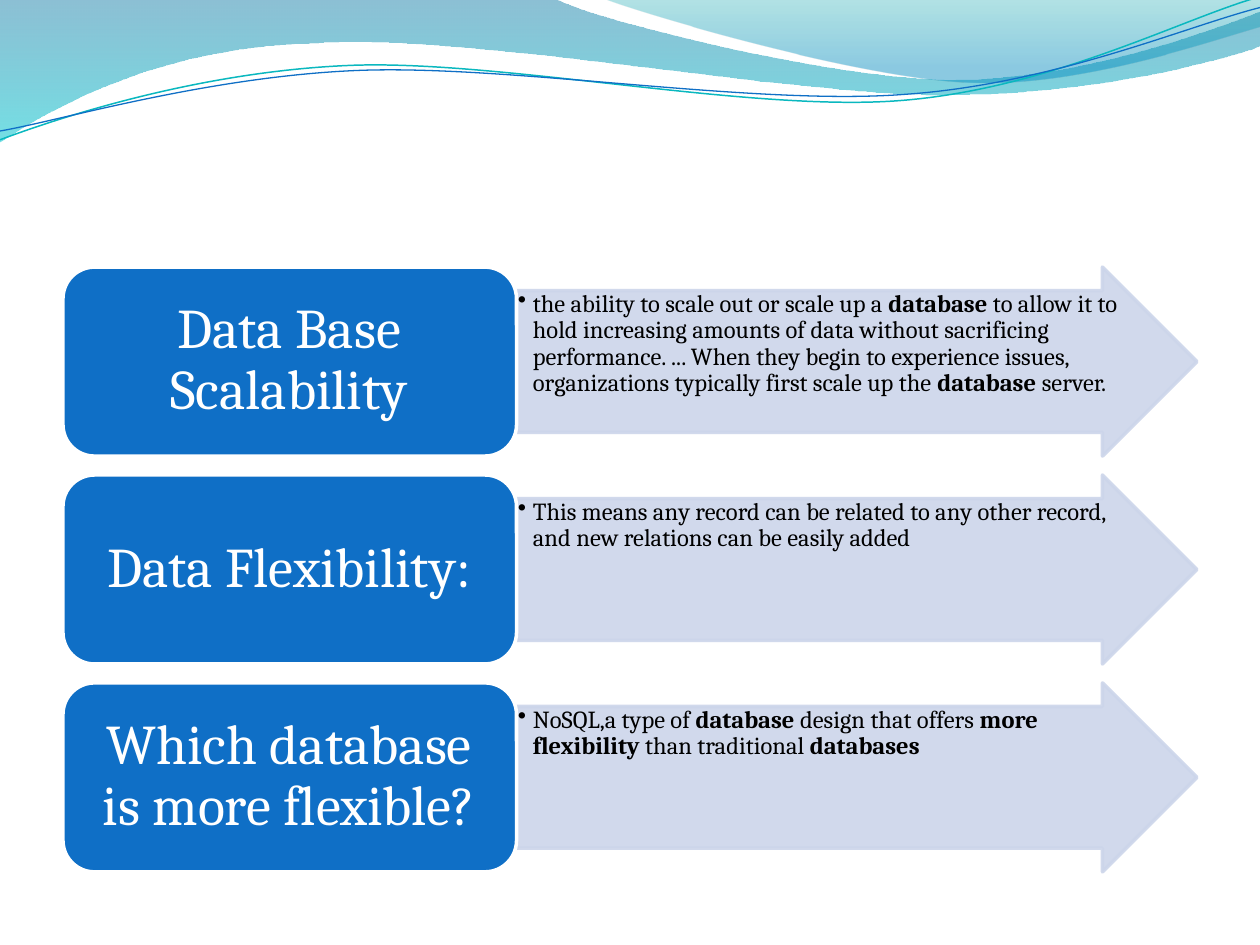
from lxml.etree import SubElement
from pptx import Presentation
from pptx.dml.color import RGBColor
from pptx.enum.shapes import MSO_SHAPE as Shape
from pptx.enum.text import MSO_ANCHOR as Anchor, PP_ALIGN as Align
from pptx.oxml.ns import qn
from pptx.util import Inches, Pt

COLORS = {
    "deep": "0074A1", "aqua": "00C6CF", "teal": "00A1A9", "sky": "008BBF",
    "teal_line": "0AB8BF", "blue": "0F6FC6", "arrow": "CCD5EA",
    "white": "FFFFFF", "black": "000000",
}
RGB = {name: RGBColor.from_string(value) for name, value in COLORS.items()}


def add_wave(shapes, start, segments, closed):
    builder = shapes.build_freeform(Inches(start[0]), Inches(start[1]))
    ends = [(Inches(segment[-2]), Inches(segment[-1])) for segment in segments]
    builder.add_line_segments(ends, close=closed)
    wave = builder.convert_to_shape()
    wave.shadow.inherit = False
    edges = list(wave._element.spPr.iter(qn("a:lnTo")))
    for edge, segment in zip(edges, segments):
        if len(segment) == 6:
            curve = edge.makeelement(qn("a:cubicBezTo"), {})
            for x, y in zip(segment[::2], segment[1::2]):
                point = SubElement(curve, qn("a:pt"))
                point.set("x", str(Inches(x) - wave.left))
                point.set("y", str(Inches(y) - wave.top))
            edge.getparent().replace(edge, curve)
    return wave


def set_opacity(color_element, percent):
    SubElement(color_element, qn("a:alpha")).set("val", str(percent * 1000))


deck = Presentation()
deck.slide_width, deck.slide_height = Inches(10), Inches(7.5)
page = deck.slides.add_slide(deck.slide_layouts[6])

bands = [
    ((0, 0),
     [(4.4, -0.01), (4.76, 0.17, 6.64, 0.63, 7.58, 0.63),
      (8.53, 0.63, 9.58, 0.26, 10, 0.09), (10.01, 0.36),
      (9.83, 0.44, 8.7, 0.76, 7.46, 0.75), (6.22, 0.75, 3.82, 0.28, 2.57, 0.34),
      (1.29, 0.36, 0.46, 0.83, -0.01, 1.13)],
     [(0, "deep", 45), (1, "aqua", 55)]),
    ((4.79, -0.01),
     [(5.09, 0.11, 6.82, 0.62, 7.69, 0.65), (8.56, 0.69, 9.61, 0.32, 10, 0.21), (10, 0)],
     [(0, "teal", 30), (0.8, "sky", 45)]),
]
for start, segments, stops in bands:
    band = add_wave(page.shapes, start, segments, True)
    band.line.fill.background()
    band.fill.gradient()
    band.fill.gradient_angle = 270
    for stop, (position, color, opacity) in zip(band.fill.gradient_stops, stops):
        stop.position = position
        stop.color.rgb = RGB[color]
    color_elements = list(band._element.spPr.iter(qn("a:srgbClr")))
    for element, (position, color, opacity) in zip(color_elements, stops):
        set_opacity(element, opacity)

strands = [
    ((0, 1.11),
     [(0.48, 0.93, 1.58, 0.57, 2.77, 0.52), (3.95, 0.47, 5.93, 0.89, 7.13, 0.8),
      (8.33, 0.71, 9.38, 0.15, 9.98, -0.02)], "teal_line", 0.85),
    ((0, 1.04),
     [(0.47, 0.96, 1.64, 0.61, 2.83, 0.56), (4.03, 0.51, 5.97, 0.84, 7.17, 0.75),
      (8.36, 0.67, 9.41, 0.21, 10, 0.06)], "blue", 0.75),
]
for start, segments, color, width in strands:
    strand = add_wave(page.shapes, start, segments, False)
    strand.fill.background()
    strand.line.color.rgb = RGB[color]
    strand.line.width = Pt(width)

topics = [
    ("Data Base Scalability",
     [("the ability to scale out or scale up a ", False), ("database", True),
      (" to allow it to hold increasing amounts of data without sacrificing performance. ... "
       "When they begin to experience issues, organizations typically first scale up the ", False),
      ("database", True), (" server.", False)]),
    ("Data Flexibility:",
     [("This means any record can be related to any other record, "
       "and new relations can be easily added", False)]),
    ("Which database is more flexible?",
     [("NoSQL,a type of ", False), ("database", True), (" design that offers ", False),
      ("more flexibility", True), (" than traditional ", False), ("databases", True)]),
]
for row, (title, description) in enumerate(topics):
    top = 2.12 + 1.65 * row
    for kind, left, width, fill, line in [
        (Shape.RIGHT_ARROW, 4.1, 5.4, "arrow", "arrow"),
        (Shape.ROUNDED_RECTANGLE, 0.5, 3.6, "blue", "white"),
    ]:
        shape = page.shapes.add_shape(kind, Inches(left), Inches(top), Inches(width), Inches(1.5))
        shape.shadow.inherit = False
        shape.fill.solid()
        shape.fill.fore_color.rgb = RGB[fill]
        shape.line.color.rgb = RGB[line]
        shape.line.width = Pt(2)
        if kind == Shape.RIGHT_ARROW:
            shape.adjustments[0], shape.adjustments[1] = 0.75, 0.5
            for element in shape._element.spPr.iter(qn("a:srgbClr")):
                set_opacity(element, 90)

    for spans, left, drop, width, height, anchor, align, size, ink, inset_x, inset_y in [
        (description, 4.1, 0.18, 4.84, 1.12, Anchor.TOP, Align.LEFT, 14, "black", 0.01, 0.01),
        ([(title, False)], 0.57, 0.07, 3.45, 1.35, Anchor.MIDDLE, Align.CENTER, 32, "white",
         0.13, 0.07),
    ]:
        box = page.shapes.add_textbox(
            Inches(left), Inches(top + drop), Inches(width), Inches(height))
        frame = box.text_frame
        frame.word_wrap = True
        frame.vertical_anchor = anchor
        frame.margin_left = frame.margin_right = Inches(inset_x)
        frame.margin_top = frame.margin_bottom = Inches(inset_y)
        para = frame.paragraphs[0]
        para.alignment = align
        para.line_spacing = 0.9
        para.font.name = "Cambria"
        para.font.size = Pt(size)
        para.font.color.rgb = RGB[ink]
        if spans is description:
            para.level = 1
            properties = para._p.get_or_add_pPr()
            properties.set("marL", str(Inches(0.12)))
            properties.set("indent", str(Inches(-0.12)))
            bullet = properties.makeelement(qn("a:buChar"), {"char": "•"})
            properties.find(qn("a:defRPr")).addprevious(bullet)
        for text, bold in spans:
            span = para.add_run()
            span.text = text
            span.font.bold = bold

deck.save("out.pptx")
